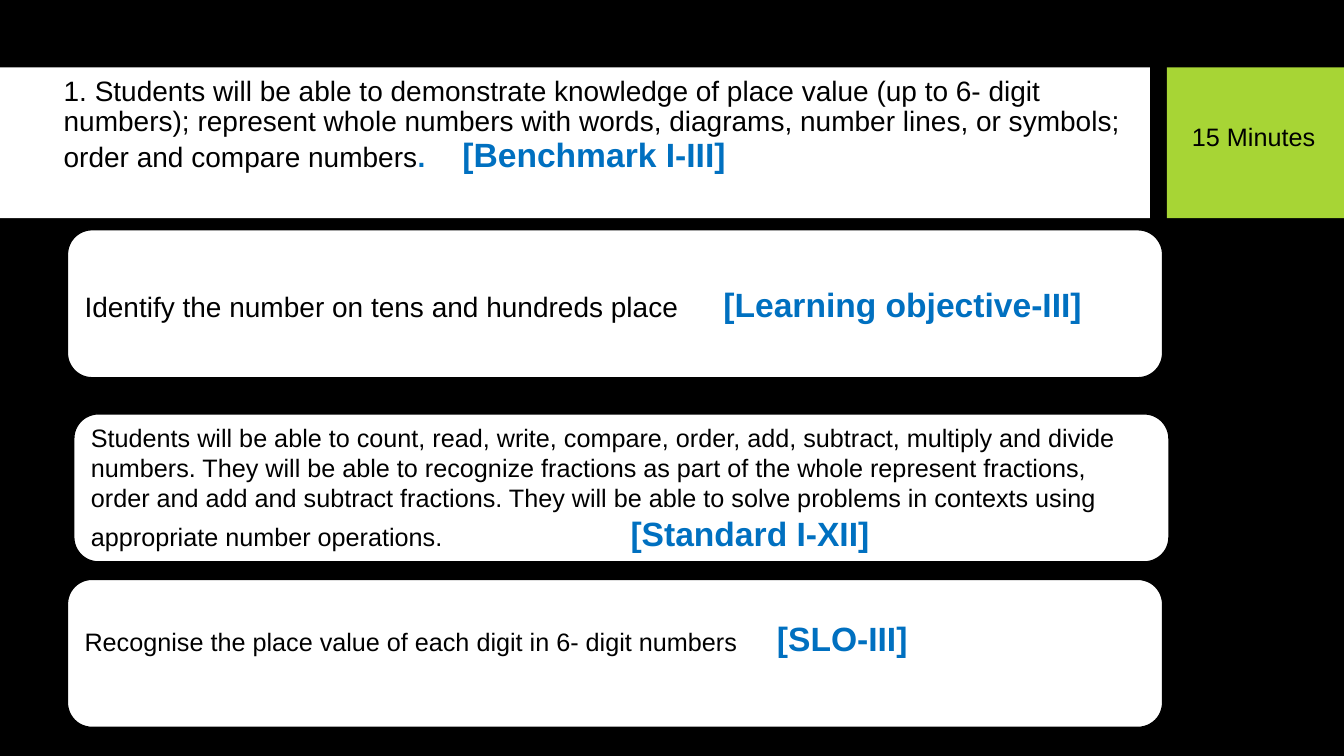
from dataclasses import dataclass
from pptx import Presentation
from pptx.dml.color import RGBColor
from pptx.enum.shapes import MSO_SHAPE as Kind
from pptx.enum.text import MSO_ANCHOR as Anchor, PP_ALIGN as Align
from pptx.oxml.ns import qn
from pptx.shapes.autoshape import Shape
from pptx.slide import Slide
from pptx.util import Cm, Pt
from lxml.etree import SubElement

BLACK = RGBColor(0x00, 0x00, 0x00)
WHITE = RGBColor(0xFF, 0xFF, 0xFF)
GREEN = RGBColor(0xA7, 0xD5, 0x35)
BLUE = RGBColor(0x00, 0x70, 0xC0)


@dataclass
class Goal:
    text: str
    tag: str
    left: float
    top: float
    size: int
    stop: float
    foot: float = 0.13


GOALS = [
    Goal("Identify the number on tens and hundreds place", "[Learning objective-III]",
         1.7, 5.79, 20, 16.1),
    Goal("Students will be able to count, read, write, compare, order, add, subtract, "
         "multiply and divide numbers. They will be able to recognize fractions as part of "
         "the whole represent fractions, order and add and subtract fractions. They will be "
         "able to solve problems in contexts using appropriate number operations.",
         "[Standard I-XII]", 1.86, 10.43, 18, 13.6),
    Goal("Recognise the place value of each digit in 6- digit numbers", "[SLO-III]",
         1.7, 14.6, 18, 17.45, 0.91),
]


def place(shape: Shape, left: float, top: float, width: float, height: float) -> None:
    shape.left, shape.top = Cm(left), Cm(top)
    shape.width, shape.height = Cm(width), Cm(height)


def block(slide: Slide, kind: Kind, left: float, top: float, width: float,
          height: float, fill: RGBColor, edge: bool = False) -> Shape:
    shape = slide.shapes.add_shape(kind, Cm(left), Cm(top), Cm(width), Cm(height))
    shape.shadow.inherit = False
    shape.fill.solid()
    shape.fill.fore_color.rgb = fill
    if edge:
        shape.line.color.rgb = BLACK
        shape.line.width = Pt(1)
    else:
        shape.line.fill.background()
    return shape


def write(shape: Shape, text: str, *, size: int, dot: str = "", tag: str = "",
          stop: float = 0, foot: float = 0.13, space: float = 1.0,
          anchor: Anchor = Anchor.MIDDLE) -> None:
    frame = shape.text_frame
    frame.word_wrap = True
    frame.vertical_anchor = anchor
    frame.margin_bottom = Cm(foot)
    para = frame.paragraphs[0]
    para.alignment = Align.LEFT
    para.line_spacing = space
    if stop:
        tabs = SubElement(para._p.get_or_add_pPr(), qn("a:tabLst"))
        SubElement(tabs, qn("a:tab"), pos=str(Cm(stop)), algn="l")
    parts = [(text, size, BLACK, False), (dot, size, BLUE, True),
             ("\t" + tag if tag else "", 24, BLUE, True)]
    for words, points, color, bold in parts:
        if words:
            run = para.add_run()
            run.text = words
            run.font.name = "Arial"
            run.font.size = Pt(points)
            run.font.bold = bold
            run.font.color.rgb = color


def main() -> None:
    deck = Presentation()
    deck.slide_width, deck.slide_height = Cm(33.87), Cm(19.05)
    slide = deck.slides.add_slide(deck.slide_layouts[5])
    slide.background.fill.solid()
    slide.background.fill.fore_color.rgb = BLACK

    block(slide, Kind.RECTANGLE, 0, 1.7, 28.98, 3.8, WHITE)
    block(slide, Kind.RECTANGLE, 29.41, 1.7, 4.46, 3.8, GREEN)
    time = slide.shapes.add_textbox(Cm(29.79), Cm(2.92), Cm(4.06), Cm(1.02))
    write(time, "15 Minutes", size=18, anchor=Anchor.TOP)

    title = slide.shapes.title
    slide.shapes._spTree.append(title._element)
    place(title, 1.35, 2.16, 27.94, 3)
    write(title, "1. Students will be able to demonstrate knowledge of place value (up to "
          "6- digit numbers); represent whole numbers with words, diagrams, number lines, "
          "or symbols; order and compare numbers", size=20, dot=".",
          tag="[Benchmark I-III]", stop=10.05, foot=1.1, space=0.9)

    for goal in GOALS:
        card = block(slide, Kind.ROUNDED_RECTANGLE, goal.left, goal.top, 27.6, 3.73,
                     WHITE, edge=True)
        write(card, goal.text, size=goal.size, tag=goal.tag, stop=goal.stop,
              foot=goal.foot)

    deck.save("out.pptx")


if __name__ == "__main__":
    main()
